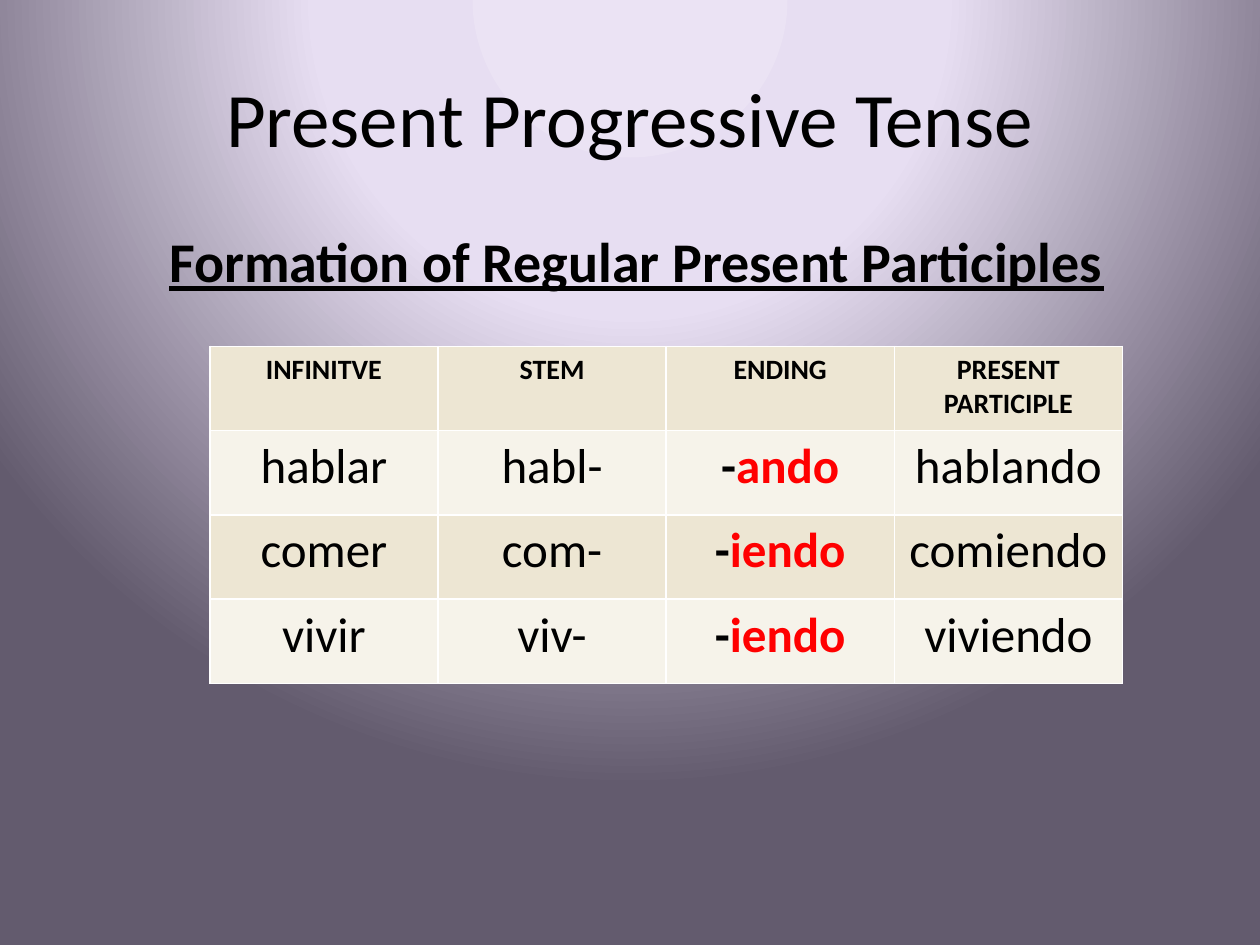
"""Build a slide on forming regular Spanish present participles."""
from dataclasses import dataclass

from pptx import Presentation
from pptx.dml.color import RGBColor as Rgb
from pptx.enum.text import MSO_ANCHOR as Anchor, PP_ALIGN as Align
from pptx.oxml import parse_xml
from pptx.oxml.ns import nsdecls
from pptx.util import Cm, Pt


@dataclass(frozen=True)
class Theme:
    font: str = "Calibri"
    ink: str = "000000"
    accent: str = "FF0000"
    border: str = "FFFFFF"
    bands: tuple = ("EDE6D3", "F6F3EA")
    glow: tuple = ((0, "EBE3F4"), (40, "E7DEF2"), (100, "635B6E"))
    title_size: int = 44
    heading_size: int = 32
    header_size: int = 16
    body_size: int = 28


class Lesson:
    def __init__(self, slide, theme):
        self.slide = slide
        self.theme = theme

    def background(self):
        stops = "".join(
            f'<a:gs pos="{position * 1000}"><a:srgbClr val="{color}"/></a:gs>'
            for position, color in self.theme.glow
        )
        self.slide.element.cSld.insert(0, parse_xml(
            f'<p:bg {nsdecls("p", "a")}><p:bgPr><a:gradFill rotWithShape="1">'
            f'<a:gsLst>{stops}</a:gsLst><a:path path="circle">'
            '<a:fillToRect l="50000" t="-80000" r="50000" b="180000"/>'
            '</a:path></a:gradFill><a:effectLst/></p:bgPr></p:bg>'
        ))

    def style(self, paragraph, size, bold=False):
        paragraph.alignment = Align.CENTER
        font = paragraph.font
        font.name, font.size, font.bold = self.theme.font, Pt(size), bold
        font.color.rgb = Rgb.from_string(self.theme.ink)

    def text(self, wording, left, top, width, height, size, bold=False, anchor=Anchor.TOP):
        frame = self.slide.shapes.add_textbox(Cm(left), Cm(top), Cm(width), Cm(height)).text_frame
        frame.word_wrap = True
        frame.vertical_anchor = anchor
        paragraph = frame.paragraphs[0]
        paragraph.text = wording
        self.style(paragraph, size, bold)
        return paragraph

    def cell(self, cell, wording, fill, size, bold, ending):
        paragraph = cell.text_frame.paragraphs[0]
        self.style(paragraph, size, bold)
        if ending:
            paragraph.add_run().text = "-"
            suffix = paragraph.add_run()
            suffix.text = wording.removeprefix("-")
            suffix.font.color.rgb = Rgb.from_string(self.theme.accent)
        else:
            paragraph.text = wording
        cell.fill.solid()
        cell.fill.fore_color.rgb = Rgb.from_string(fill)
        properties = cell._tc.get_or_add_tcPr()
        for index, side in enumerate("LRTB"):
            properties.insert(index, parse_xml(
                f'<a:ln{side} {nsdecls("a")} w="{Pt(1)}"><a:solidFill>'
                f'<a:srgbClr val="{self.theme.border}"/></a:solidFill></a:ln{side}>'
            ))

    def table(self, rows, left, top, column_width, row_height):
        columns = len(rows[0])
        grid = self.slide.shapes.add_table(
            len(rows), columns, Cm(left), Cm(top),
            Cm(column_width * columns), Cm(row_height * len(rows)),
        ).table
        grid.first_row = grid.horz_banding = False
        for r, row in enumerate(rows):
            header = r == 0
            size = self.theme.header_size if header else self.theme.body_size
            for c, wording in enumerate(row):
                ending = not header and rows[0][c] == "ENDING"
                self.cell(grid.cell(r, c), wording, self.theme.bands[r % 2],
                          size, header or ending, ending)


def main():
    deck = Presentation()
    deck.slide_width, deck.slide_height = Cm(25.4), Cm(19.05)
    theme = Theme()
    lesson = Lesson(deck.slides.add_slide(deck.slide_layouts[6]), theme)
    lesson.background()
    lesson.text("Present Progressive Tense", 1.27, 0.76, 22.86, 3.18,
                theme.title_size, anchor=Anchor.MIDDLE)
    heading = lesson.text("Formation of Regular Present Participles",
                          1.4, 4.45, 22.86, 9.96, theme.heading_size, bold=True)
    heading.font.underline = True
    heading.space_before = Pt(6.4)
    participles = [
        ("INFINITVE", "STEM", "ENDING", "PRESENT PARTICIPLE"),
        ("hablar", "habl-", "-ando", "hablando"),
        ("comer", "com-", "-iendo", "comiendo"),
        ("vivir", "viv-", "-iendo", "viviendo"),
    ]
    lesson.table(participles, left=4.23, top=6.98, column_width=4.6, row_height=1.7)
    deck.save("out.pptx")


if __name__ == "__main__":
    main()
